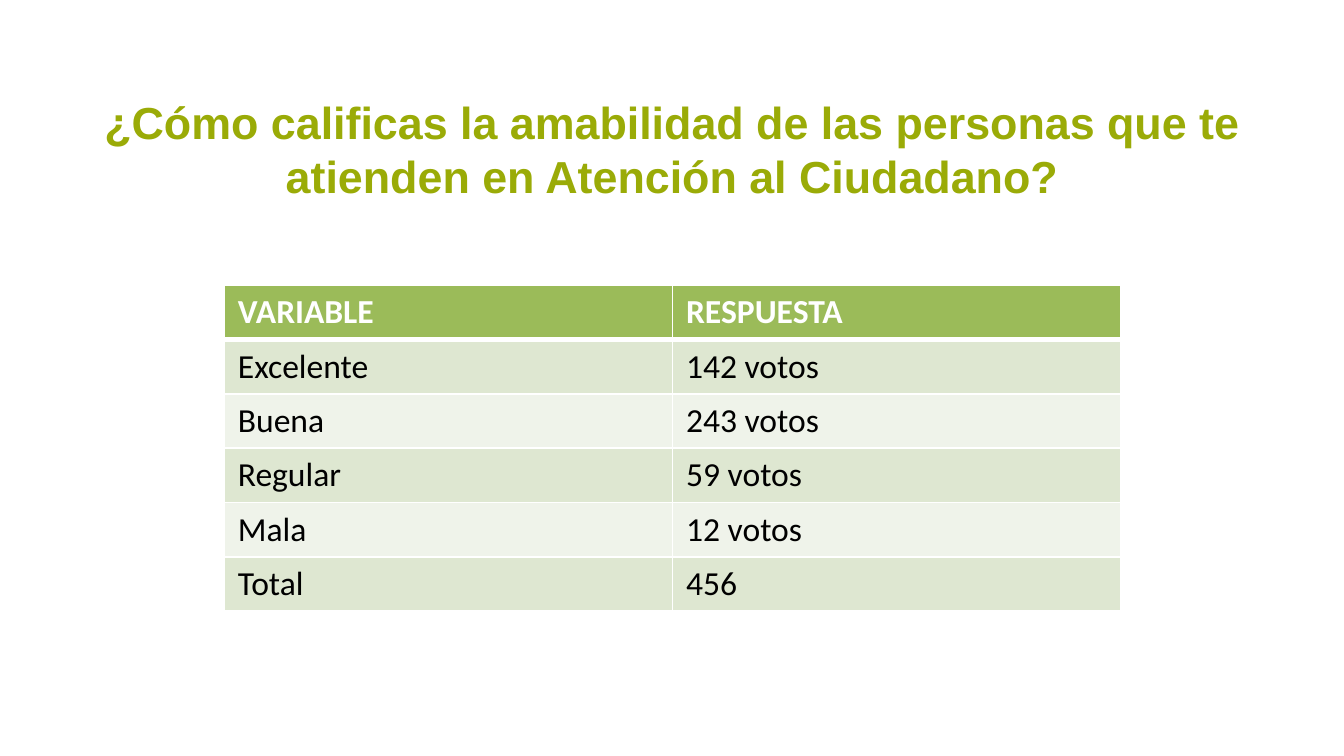
from dataclasses import dataclass

from lxml.etree import SubElement
from pptx import Presentation
from pptx.dml.color import RGBColor as RGB
from pptx.enum.text import MSO_ANCHOR as ANCHOR, PP_ALIGN as ALIGN
from pptx.oxml.ns import qn
from pptx.util import Inches, Pt


@dataclass(frozen=True)
class Theme:
    title: str = "9AAB07"
    header: str = "9BBB59"
    bands: tuple = ("DEE7D1", "EFF3EA")
    white: str = "FFFFFF"
    black: str = "000000"
    title_font: str = "Arial"
    body_font: str = "Calibri"
    title_size: int = 24
    body_size: int = 18


def style_run(r, font, size, color, bold):
    r.font.name = font
    r.font.size = Pt(size)
    r.font.bold = bold
    r.font.color.rgb = RGB.from_string(color)


def add_border(cell, side, width):
    ln = SubElement(cell._tc.get_or_add_tcPr(), qn(f"a:ln{side}"), w=str(Pt(width)))
    fill = SubElement(ln, qn("a:solidFill"))
    SubElement(fill, qn("a:srgbClr"), val=theme.white)


theme = Theme()
prs = Presentation()
prs.slide_width = Inches(10)
prs.slide_height = Inches(10 * 9 / 16)
s = prs.slides.add_slide(prs.slide_layouts[6])

title = s.shapes.add_textbox(Inches(0.5), Inches(0.83), Inches(9), Inches(0.94))
tf = title.text_frame
tf.word_wrap = True
tf.vertical_anchor = ANCHOR.MIDDLE
tf.margin_bottom = Inches(0.44)
tf.text = "¿Cómo calificas la amabilidad de las personas que te atienden en Atención al Ciudadano?"
p = tf.paragraphs[0]
p.alignment = ALIGN.CENTER
style_run(p.runs[0], theme.title_font, theme.title_size, theme.title, True)

rows = [
    ("VARIABLE", "RESPUESTA"),
    ("Excelente", "142 votos"),
    ("Buena", "243 votos"),
    ("Regular", "59 votos"),
    ("Mala", "12 votos"),
    ("Total", "456"),
]
frame = s.shapes.add_table(
    len(rows), 2, Inches(1.67), Inches(2.12), Inches(6.67), Inches(2.43)
)
table = frame.table

for i, row in enumerate(rows):
    is_header = i == 0
    fill = theme.header if is_header else theme.bands[(i - 1) % 2]
    color = theme.white if is_header else theme.black
    for j, text in enumerate(row):
        cell = table.cell(i, j)
        for side in "LRTB":
            thick = (i == 0 and side == "B") or (i == 1 and side == "T")
            add_border(cell, side, 3 if thick else 1)
        cell.fill.solid()
        cell.fill.fore_color.rgb = RGB.from_string(fill)
        cell.text_frame.text = text
        r = cell.text_frame.paragraphs[0].runs[0]
        style_run(r, theme.body_font, theme.body_size, color, is_header)

prs.save("out.pptx")
